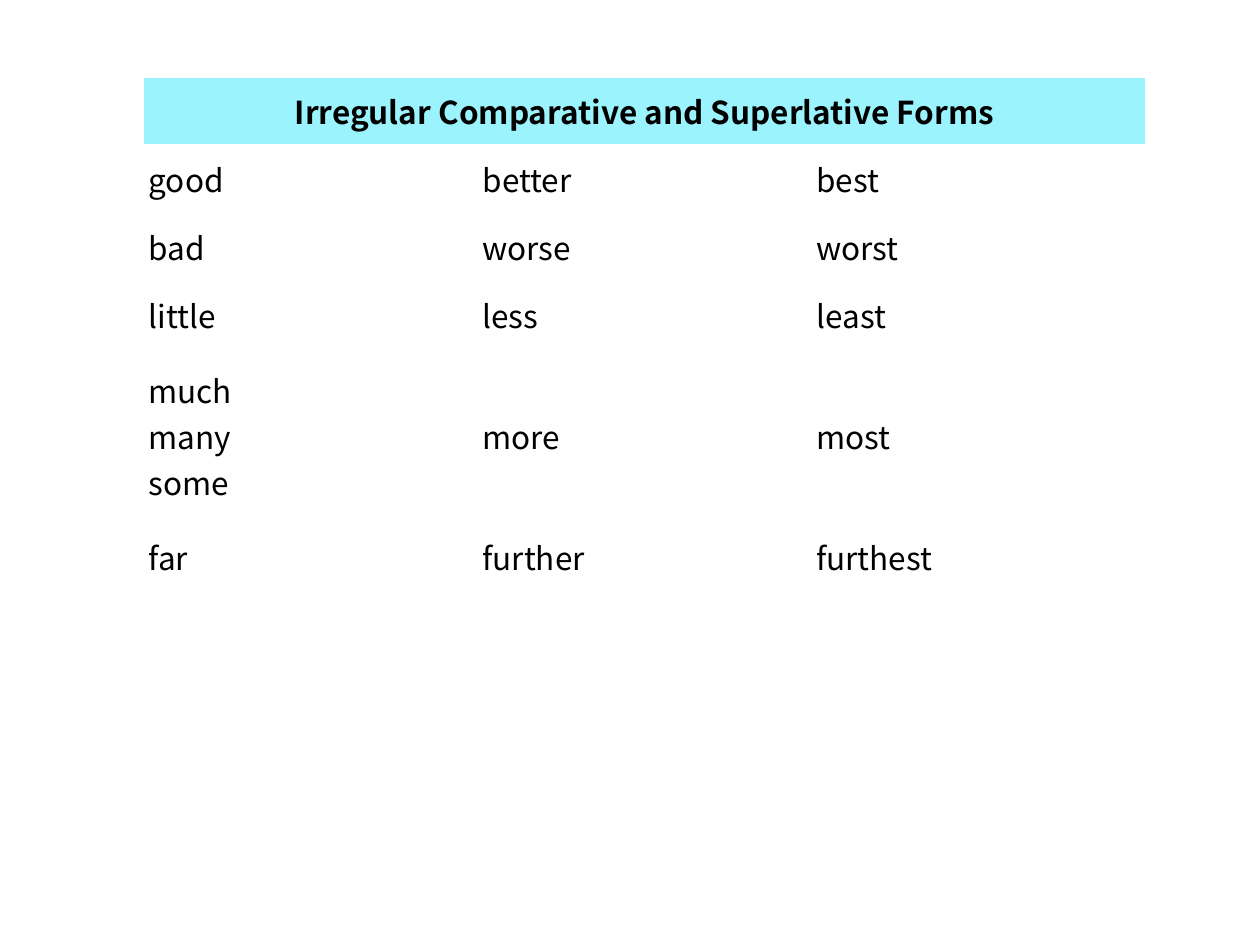
"""Build a slide with a table of irregular comparative and superlative forms."""
from pptx import Presentation
from pptx.dml.color import RGBColor
from pptx.enum.text import MSO_ANCHOR, PP_ALIGN
from pptx.util import Inches, Pt

MIDDLE = MSO_ANCHOR.MIDDLE
CENTER, LEFT = PP_ALIGN.CENTER, PP_ALIGN.LEFT
BLACK = RGBColor(0x00, 0x00, 0x00)
WHITE = RGBColor(0xFF, 0xFF, 0xFF)
CYAN = RGBColor(0x9B, 0xF4, 0xFD)
FONT = "Noto Sans CJK KR"
COL, ROW, TALL = Inches(2.65), Inches(0.54), Inches(1.38)
PAD = Inches(0.04)
TITLE = "Irregular Comparative and Superlative Forms"
FORMS = [
    ("good", "better", "best"),
    ("bad", "worse", "worst"),
    ("little", "less", "least"),
    ("much\nmany\nsome", "more", "most"),
    ("far", "further", "furthest"),
]


def fill_cell(cell, text, color, align, bold):
    cell.fill.solid()
    cell.fill.fore_color.rgb = color
    cell.vertical_anchor = MIDDLE
    cell.margin_left = cell.margin_right = PAD
    cell.margin_top = cell.margin_bottom = PAD
    para = cell.text_frame.paragraphs[0]
    para.alignment = align
    for i, word in enumerate(text.split("\n")):
        if i:
            para.add_line_break()
        run = para.add_run()
        run.text = word
        run.font.name = FONT
        run.font.size = Pt(18)
        run.font.bold = bold
        run.font.color.rgb = BLACK


deck = Presentation()
deck.slide_width, deck.slide_height = Inches(10), Inches(7.5)
slide = deck.slides.add_slide(deck.slide_layouts[6])

rows = len(FORMS) + 1
frame = slide.shapes.add_table(
    rows, 3, Inches(1.14), Inches(0.61), 3 * COL, (rows - 1) * ROW + TALL
)
table = frame.table
table.first_row = False
table.horz_banding = False
for col in table.columns:
    col.width = COL

table.rows[0].height = ROW
head = table.cell(0, 0)
head.merge(table.cell(0, 2))
fill_cell(head, TITLE, CYAN, CENTER, True)

for r, words in enumerate(FORMS, 1):
    table.rows[r].height = TALL if "\n" in words[0] else ROW
    for c, word in enumerate(words):
        fill_cell(table.cell(r, c), word, WHITE, LEFT, False)

deck.save("out.pptx")
